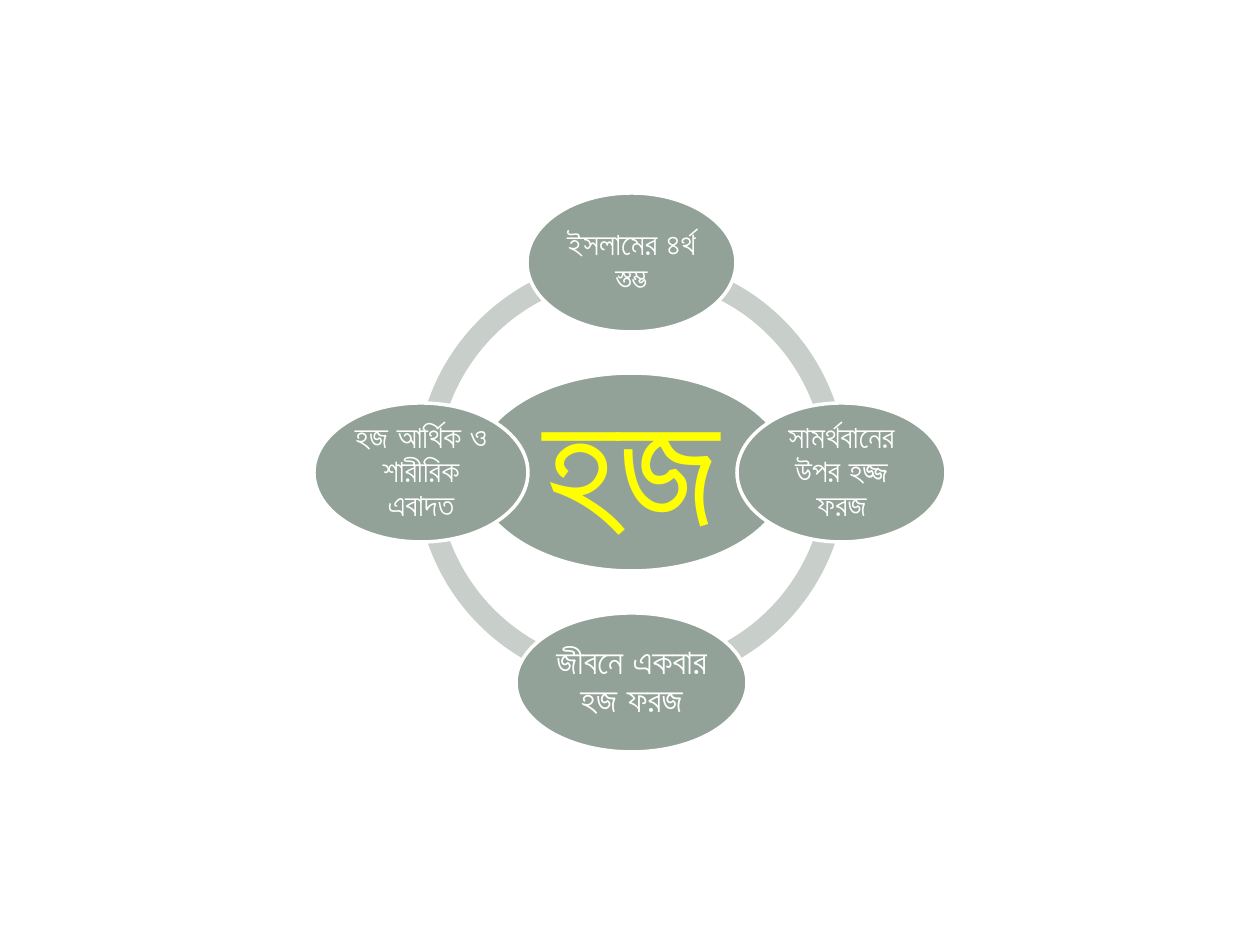
from lxml import etree
from pptx import Presentation
from pptx import util as u
from pptx.dml.color import RGBColor
from pptx.enum import shapes, text
from pptx.oxml.ns import qn

EMU_PER_PX = 914400 // 126
FONT = "Arial"
COLORS = {
    "ring": "C8CECA",
    "oval": "93A299",
    "white": "FFFFFF",
    "yellow": "FFFF00",
}
CENTER_X, CENTER_Y = 631, 472
RING_SIZE = 431
ORBIT = 210  # distance from the hub centre to each outer oval
OVAL_HEIGHT = 139

# direction x, direction y, width, text, font size
OUTER_OVALS = [
    (0, -1, 209, "ইসলামের ৪র্থ স্তম্ভ", 18),
    (1, 0, 209, "সামর্থবানের উপর হজ্জ ফরজ", 18),
    (0, 1, 231, "জীবনে একবার হজ ফরজ", 20),
    (-1, 0, 214, "হজ আর্থিক ও শারীরিক এবাদত", 18),
]


def px(n):
    return u.Emu(n * EMU_PER_PX)


def rgb(name):
    return RGBColor.from_string(COLORS[name])


def add_centered(slide, kind, cx, cy, width, height, fill):
    """Add a filled preset shape around a centre point."""
    sp = slide.shapes.add_shape(kind, px(cx - width // 2), px(cy - height // 2),
                                px(width), px(height))
    sp.shadow.inherit = False
    sp.fill.solid()
    sp.fill.fore_color.rgb = rgb(fill)
    sp.line.fill.background()
    return sp


def add_ring(slide):
    """Draw the ring as four quarter arcs; angles are in units of 5/3 degree."""
    quarter = 54
    for i in range(4):
        sp = add_centered(slide, shapes.MSO_SHAPE.BLOCK_ARC, CENTER_X, CENTER_Y,
                          RING_SIZE, RING_SIZE, "ring")
        sp.adjustments[0] = i * quarter
        sp.adjustments[1] = (i + 1) % 4 * quarter
        sp.adjustments[2] = 0.05


def add_oval(slide, cx, cy, width, height, words, size, color="white", inset=4):
    sp = add_centered(slide, shapes.MSO_SHAPE.OVAL, cx, cy, width, height, "oval")
    sp.line.color.rgb = rgb("white")
    sp.line.width = u.Pt(2)

    tf = sp.text_frame
    tf.word_wrap = True
    tf.vertical_anchor = text.MSO_ANCHOR.MIDDLE
    tf.margin_left = tf.margin_right = tf.margin_top = tf.margin_bottom = px(inset)
    p = tf.paragraphs[0]
    p.alignment = text.PP_ALIGN.CENTER
    p.line_spacing = 0.9
    r = p.add_run()
    r.text = words
    r.font.size = u.Pt(size)
    r.font.name = FONT
    r.font.color.rgb = rgb(color)
    # Bengali takes its typeface from the complex-script font
    etree.SubElement(r.font._element, qn("a:cs"), typeface=FONT)


def main():
    prs = Presentation()
    prs.slide_width, prs.slide_height = u.Inches(10), u.Inches(7.5)
    slide = prs.slides.add_slide(prs.slide_layouts[6])

    add_ring(slide)
    add_oval(slide, CENTER_X, CENTER_Y, 315, 198, "হজ", 96, "yellow", inset=16)
    for dx, dy, width, words, size in OUTER_OVALS:
        add_oval(slide, CENTER_X + dx * ORBIT, CENTER_Y + dy * ORBIT,
                 width, OVAL_HEIGHT, words, size)

    prs.save("out.pptx")


if __name__ == "__main__":
    main()
